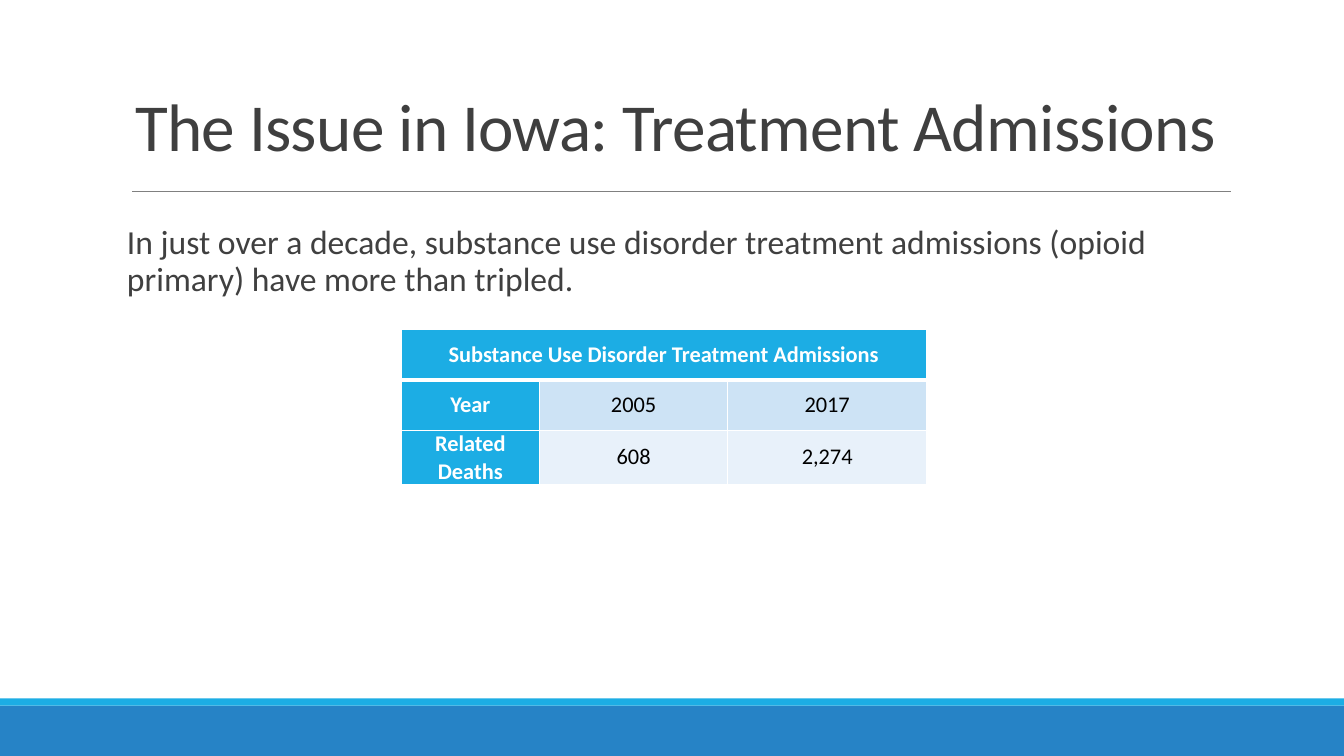
from dataclasses import dataclass

from lxml import etree
from pptx import Presentation
from pptx.dml.color import RGBColor
from pptx.enum.shapes import MSO_CONNECTOR, MSO_SHAPE
from pptx.enum.text import MSO_ANCHOR, PP_ALIGN
from pptx.oxml.ns import qn
from pptx.util import Inches, Pt

RECT = MSO_SHAPE.RECTANGLE
STRAIGHT = MSO_CONNECTOR.STRAIGHT
LEFT, CENTER = PP_ALIGN.LEFT, PP_ALIGN.CENTER
TOP, MIDDLE, BOTTOM = MSO_ANCHOR.TOP, MSO_ANCHOR.MIDDLE, MSO_ANCHOR.BOTTOM


@dataclass(frozen=True)
class Theme:
    font: str = "Calibri"
    title_size: int = 48
    body_size: int = 24
    table_size: int = 16
    title: str = "3F3F3F"
    body: str = "404040"
    rule: str = "808080"
    footer: str = "2683C6"
    accent: str = "1CADE4"
    bands: tuple = ("CDE3F5", "E8F1FA")
    white: str = "FFFFFF"
    black: str = "000000"


def rgb(value):
    return RGBColor.from_string(value)


def write(tf, text, *, font, size, color, bold=False, align=LEFT, anchor=TOP,
          margins=(0.1, 0.05), line=1.0, after=0, indent=0, spacing=0):
    """Fill a text frame; margins are horizontal and vertical, in inches."""
    tf.word_wrap = True
    tf.vertical_anchor = anchor
    tf.margin_left = tf.margin_right = Inches(margins[0])
    tf.margin_top = tf.margin_bottom = Inches(margins[1])
    p = tf.paragraphs[0]
    p.alignment, p.line_spacing, p.space_after = align, line, Pt(after)
    if indent:
        pPr = p._p.get_or_add_pPr()
        pPr.set("marL", str(Inches(indent)))
        pPr.set("indent", "0")
    r = p.add_run()
    r.text = text
    r.font.name, r.font.size, r.font.bold = font, Pt(size), bold
    r.font.color.rgb = rgb(color)
    if spacing:
        r._r.get_or_add_rPr().set("spc", str(int(spacing * 100)))


def set_borders(cell, color, bottom=1):
    """Draw 1 pt sides, with the bottom width given in points."""
    tcPr = cell._tc.get_or_add_tcPr()
    widths = {"a:lnL": 1, "a:lnR": 1, "a:lnT": 1, "a:lnB": bottom}
    for i, (tag, width) in enumerate(widths.items()):
        ln = etree.Element(qn(tag), w=str(Pt(width)))
        fill = etree.SubElement(ln, qn("a:solidFill"))
        etree.SubElement(fill, qn("a:srgbClr"), val=color)
        tcPr.insert(i, ln)


class SlideBuilder:
    """Holds the theme and the slide being built."""

    def __init__(self, s, theme):
        self.s, self.theme = s, theme

    def band(self, left, top, width, height, color):
        sp = self.s.shapes.add_shape(
            RECT, Inches(left), Inches(top), Inches(width), Inches(height))
        sp.shadow.inherit = False
        sp.fill.solid()
        sp.fill.fore_color.rgb = rgb(color)
        sp.line.fill.background()

    def rule(self, left, right, y):
        line = self.s.shapes.add_connector(
            STRAIGHT, Inches(left), Inches(y), Inches(right), Inches(y))
        line.line.color.rgb = rgb(self.theme.rule)
        line.line.width = Pt(0.5)
        etree.SubElement(line._element.spPr, qn("a:effectLst"))

    def text(self, left, top, width, height, text, **style):
        sp = self.s.shapes.add_textbox(
            Inches(left), Inches(top), Inches(width), Inches(height))
        write(sp.text_frame, text, font=self.theme.font, **style)

    def table(self, left, top, col_widths, row_heights, rows):
        """Add a table with a merged heading row and a heading column."""
        t = self.theme
        table = self.s.shapes.add_table(
            len(rows), len(col_widths), Inches(left), Inches(top),
            Inches(sum(col_widths)), Inches(sum(row_heights))).table
        for column, width in zip(table.columns, col_widths):
            column.width = Inches(width)
        for row, height in zip(table.rows, row_heights):
            row.height = Inches(height)
        table.cell(0, 0).merge(table.cell(0, len(col_widths) - 1))
        for i, values in enumerate(rows):
            for j in range(len(col_widths)):
                cell = table.cell(i, j)
                heading = i == 0 or j == 0
                cell.fill.solid()
                cell.fill.fore_color.rgb = rgb(
                    t.accent if heading else t.bands[(i - 1) % 2])
                set_borders(cell, t.white, bottom=3 if i == 0 else 1)
                if j >= len(values):
                    continue
                cell.vertical_anchor = MIDDLE
                cell.margin_left = cell.margin_right = Inches(0.07)
                cell.margin_top = cell.margin_bottom = 0
                write(cell.text_frame, values[j], font=t.font,
                      size=t.table_size, bold=heading, align=CENTER,
                      color=t.white if heading else t.black,
                      anchor=None, margins=(0.07, 0))


def main():
    prs = Presentation()
    prs.slide_width, prs.slide_height = Inches(13.33), Inches(7.5)
    theme = Theme()
    slide = SlideBuilder(prs.slides.add_slide(prs.slide_layouts[6]), theme)

    slide.band(0, 7, 13.33, 0.5, theme.footer)
    slide.band(0, 6.93, 13.33, 0.07, theme.accent)
    slide.rule(1.31, 12.21, 1.9)
    slide.text(1.2, 0.34, 11, 1.35, "The Issue in Iowa: Treatment Admissions",
               size=theme.title_size, color=theme.title, align=CENTER,
               anchor=BOTTOM, line=0.85, spacing=-0.5)
    slide.text(1.2, 2.19, 11, 4.62,
               "In just over a decade, substance use disorder treatment "
               "admissions (opioid primary) have more than tripled.",
               size=theme.body_size, color=theme.body, margins=(0, 0.05),
               line=0.9, after=2, indent=0.06)
    slide.table(3.98, 3.27, (1.37, 1.87, 1.97), (0.5, 0.5, 0.5), [
        ("Substance Use Disorder Treatment Admissions",),
        ("Year", "2005", "2017"),
        ("Related Deaths", "608", "2,274"),
    ])
    prs.save("out.pptx")


if __name__ == "__main__":
    main()
